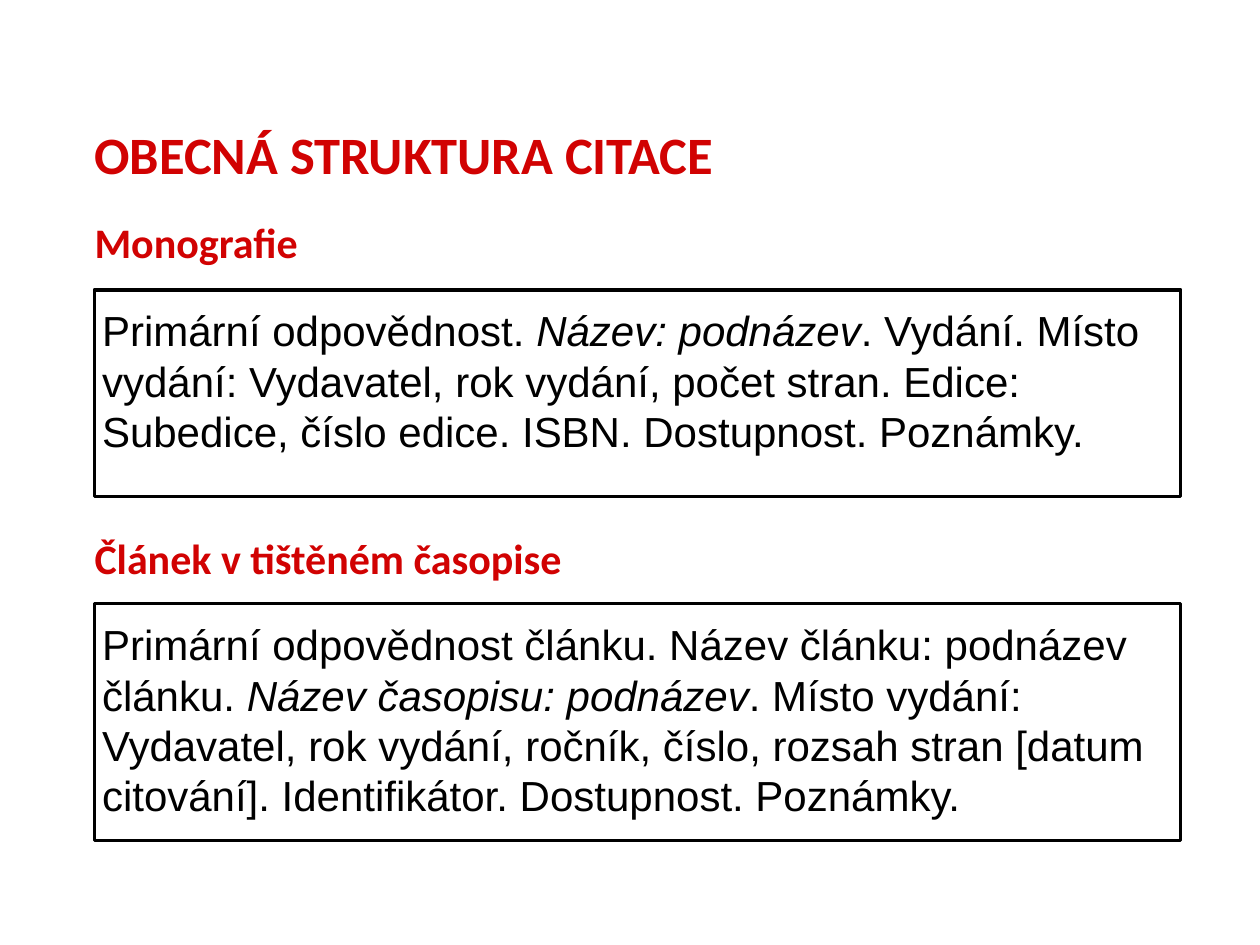
import pptx
import pptx.util
import pptx.dml.color
import pptx.enum.shapes
import pptx.enum.text

COLORS = {"heading": "D10202", "text": "000000", "panel": "FFFFFF", "border": "000000"}
TITLE = "OBECNÁ STRUKTURA CITACE"
SECTIONS = [
    {
        "heading": "Monografie",
        "heading_top": 1.72,
        "panel_top": 2.3,
        "panel_height": 1.64,
        "citation": [
            ("Primární odpovědnost. ", False),
            ("Název: podnázev", True),
            (". Vydání. Místo vydání: Vydavatel, rok vydání, počet stran. "
             "Edice: Subedice, číslo edice. ISBN. Dostupnost. Poznámky.", False),
        ],
    },
    {
        "heading": "Článek v tištěném časopise",
        "heading_top": 4.23,
        "panel_top": 4.79,
        "panel_height": 1.88,
        "citation": [
            ("Primární odpovědnost článku. Název článku: podnázev článku. ", False),
            ("Název časopisu: podnázev", True),
            (". Místo vydání: Vydavatel, rok vydání, ročník, číslo, rozsah stran "
             "[datum citování]. Identifikátor. Dostupnost. Poznámky.", False),
        ],
    },
]

WIDTH, HEIGHT = 10, 7.5
LEFT = WIDTH * 0.075
PANEL_WIDTH = 8.62
HEADING_WIDTH, HEADING_HEIGHT = 7.35, 1.17


def inches(*lengths):
    return [pptx.util.Inches(length) for length in lengths]


def color(name):
    return pptx.dml.color.RGBColor.from_string(COLORS[name])


def write(box, pieces, font, size, color_name, side=0, top=0):
    frame = box.text_frame
    frame.word_wrap = True
    frame.vertical_anchor = pptx.enum.text.MSO_ANCHOR.TOP
    frame.margin_left, frame.margin_top, frame.margin_right, frame.margin_bottom = inches(side, top, side, 0)
    para = frame.paragraphs[0]
    para.alignment = pptx.enum.text.PP_ALIGN.LEFT
    for text, bold, italic in pieces:
        span = para.add_run()
        span.text = text
        span.font.name = font
        span.font.size = pptx.util.Pt(size)
        span.font.bold = bold
        span.font.italic = italic
        span.font.color.rgb = color(color_name)


def add_heading(page, text, top, size):
    box = page.shapes.add_textbox(*inches(LEFT, top, HEADING_WIDTH, HEADING_HEIGHT))
    write(box, [(text, True, False)], "Calibri", size, "heading")


def add_panel(page, section):
    box = page.shapes.add_shape(
        pptx.enum.shapes.MSO_SHAPE.RECTANGLE,
        *inches(LEFT, section["panel_top"], PANEL_WIDTH, section["panel_height"]))
    box.shadow.inherit = False
    box.fill.solid()
    box.fill.fore_color.rgb = color("panel")
    box.line.color.rgb = color("border")
    box.line.width = pptx.util.Pt(2)
    pieces = [(text, False, italic) for text, italic in section["citation"]]
    write(box, pieces, "Arial", 24, "text", side=0.06, top=0.12)


def main():
    deck = pptx.Presentation()
    deck.slide_width, deck.slide_height = inches(WIDTH, HEIGHT)
    page = deck.slides.add_slide(deck.slide_layouts[6])
    add_heading(page, TITLE, 0.97, 30)
    for section in SECTIONS:
        add_panel(page, section)
        add_heading(page, section["heading"], section["heading_top"], 24)
    deck.save("out.pptx")


if __name__ == "__main__":
    main()
